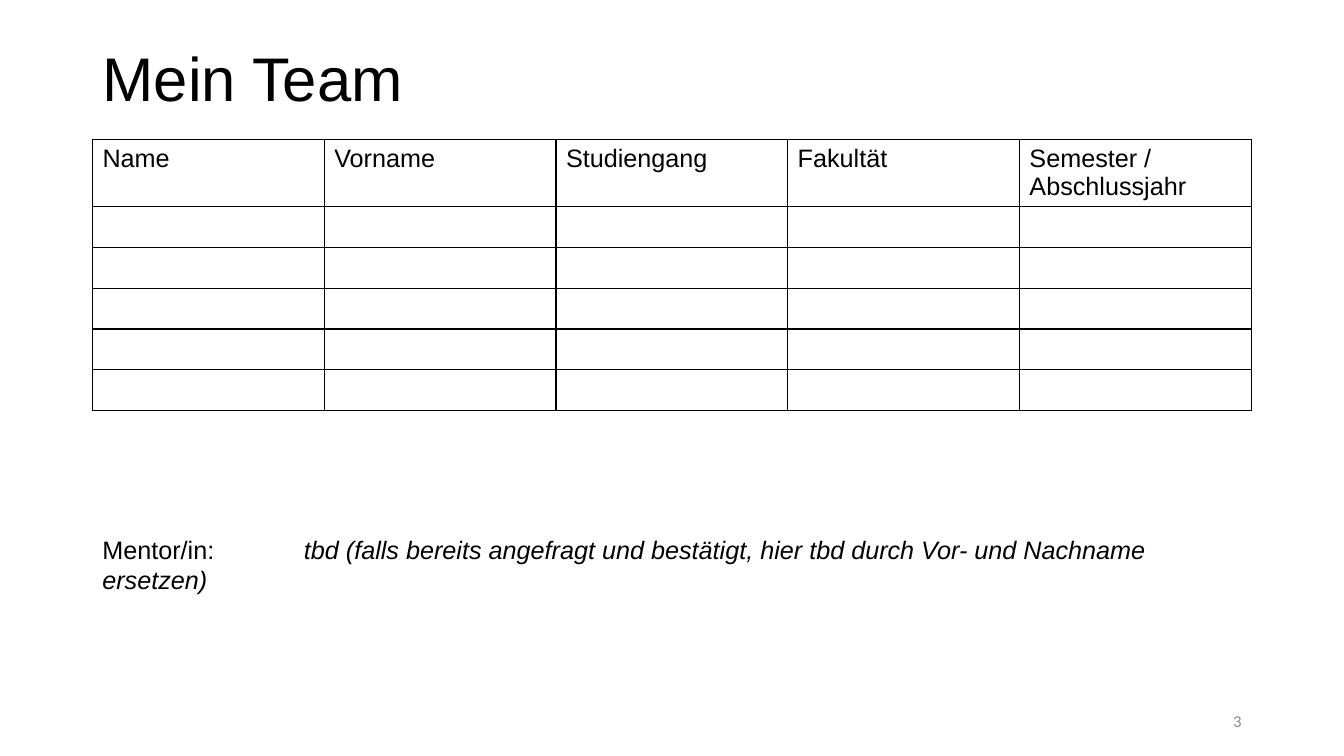
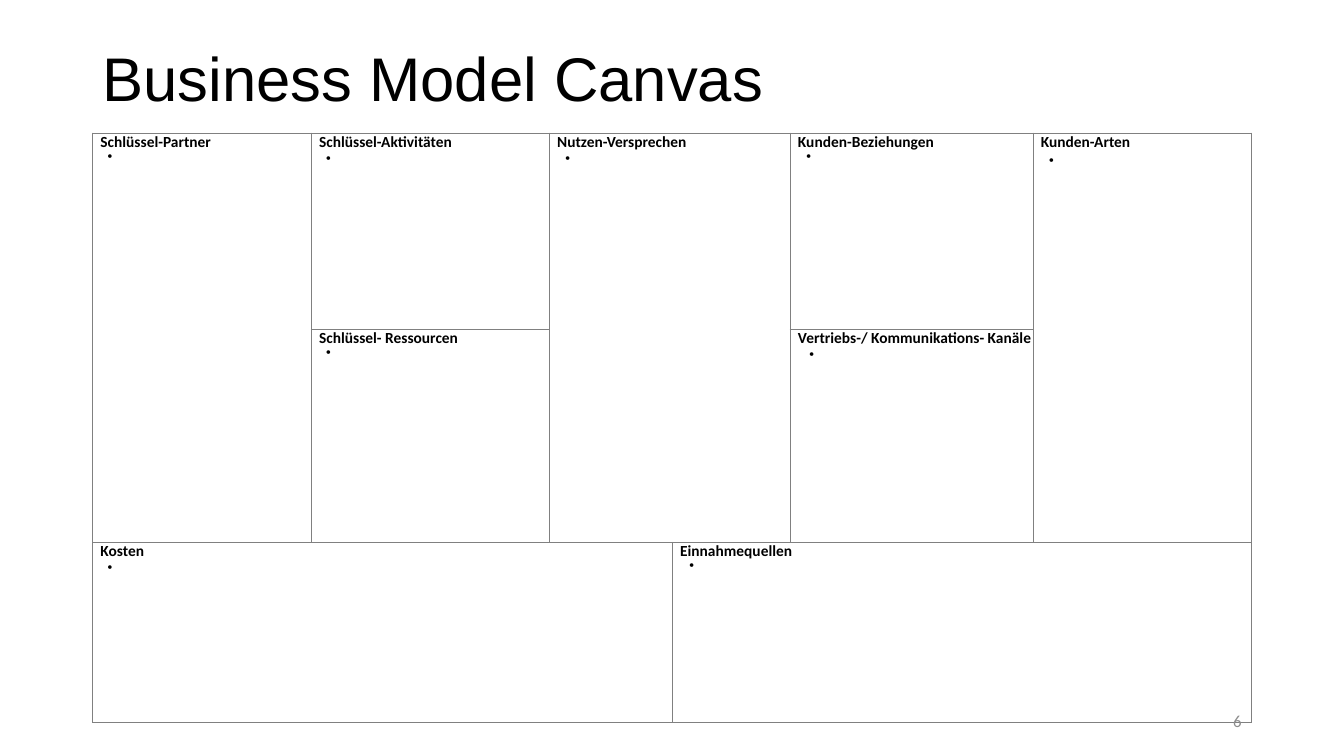
from lxml import etree
from pptx import Presentation
from pptx import util as u
from pptx.dml.color import RGBColor
from pptx.enum import text
from pptx.oxml import ns

COLORS = {"ink": "000000", "grid": "808080", "number": "8C8C8C"}
LEFT, WIDTH = u.Cm(2.33), u.Cm(29.21)


def add_span(para, words, size, color="ink", font="Arial", bold=False, italic=False):
    span = para.add_run()
    span.text = words
    span.font.name = font
    span.font.size = u.Pt(size)
    span.font.bold = bold
    span.font.italic = italic
    span.font.color.rgb = RGBColor.from_string(COLORS[color])


def add_grid(page, top, columns, rows, color, line_width):
    frame = page.shapes.add_table(
        len(rows), len(columns), LEFT, u.Cm(top), WIDTH, u.Cm(sum(rows)))
    table = frame.table
    table.first_row = False
    table.horz_banding = False
    for column, width in zip(table.columns, columns):
        column.width = u.Cm(width)
    for row, height in zip(table.rows, rows):
        row.height = u.Cm(height)
    for cell in table.iter_cells():
        cell.fill.background()
        properties = cell._tc.get_or_add_tcPr()
        for place, side in enumerate(("lnL", "lnR", "lnT", "lnB")):
            line = etree.Element(ns.qn(f"a:{side}"), w=str(u.Pt(line_width)))
            fill = etree.SubElement(line, ns.qn("a:solidFill"))
            etree.SubElement(fill, ns.qn("a:srgbClr"), val=COLORS[color])
            properties.insert(place, line)
    return table


deck = Presentation()
deck.slide_width, deck.slide_height = u.Cm(33.87), u.Cm(19.05)

pages = []
for heading in ("Mein Team", "Business Model Canvas"):
    page = deck.slides.add_slide(deck.slide_layouts[5])
    title = page.shapes.title
    title.left, title.top, title.width, title.height = LEFT, u.Cm(1.02), WIDTH, u.Cm(2.08)
    title.text_frame.auto_size = text.MSO_AUTO_SIZE.NONE
    title.text_frame.vertical_anchor = text.MSO_ANCHOR.MIDDLE
    para = title.text_frame.paragraphs[0]
    para.alignment = text.PP_ALIGN.LEFT
    para.line_spacing = 0.9
    add_span(para, heading, 44)
    pages.append(page)
team_page, canvas_page = pages

team = add_grid(team_page, 3.51, [5.84] * 5, [1.69] + [1.03] * 5, "ink", 1)
labels = ("Name", "Vorname", "Studiengang", "Fakultät", "Semester / Abschlussjahr")
for cell, label in zip(team.rows[0].cells, labels):
    add_span(cell.text_frame.paragraphs[0], label, 18)

mentor = team_page.shapes.add_textbox(LEFT, u.Cm(13.34), WIDTH, u.Cm(1.8))
mentor.text_frame.word_wrap = True
para = mentor.text_frame.paragraphs[0]
tabs = etree.SubElement(para._p.get_or_add_pPr(), ns.qn("a:tabLst"))
etree.SubElement(tabs, ns.qn("a:tab"), pos=str(u.Cm(5.08)), algn="l")
add_span(para, "Mentor/in:\t", 18)
add_span(para, "tbd (falls bereits angefragt und bestätigt, hier tbd durch "
         "Vor- und Nachname ersetzen)", 18, italic=True)

canvas = add_grid(canvas_page, 3.35, [5.51, 6, 3.1, 2.97, 6.12, 5.51],
                  [4.95, 5.36, 4.55], "grid", 0.5)
blocks = [
    (0, 0, 1, 0, "Schlüssel-Partner", 0.86, 0.85),
    (0, 1, 0, 1, "Schlüssel-Aktivitäten", 0.86, u.Pt(11.8)),
    (0, 2, 1, 3, "Nutzen-Versprechen", 0.89, u.Pt(11.8)),
    (0, 4, 0, 4, "Kunden-Beziehungen", 0.89, u.Pt(10.6)),
    (0, 5, 1, 5, "Kunden-Arten", 0.89, u.Pt(13.1)),
    (1, 1, 1, 1, "Schlüssel- Ressourcen", 0.86, u.Pt(11.8)),
    (1, 4, 1, 4, "Vertriebs-/ Kommunikations- Kanäle", 0.97, 1.08),
    (2, 0, 2, 2, "Kosten", 0.86, u.Pt(11.8)),
    (2, 3, 2, 5, "Einnahmequellen", 0.91, u.Pt(10.7)),
]
for row, column, last_row, last_column, label, indent, spacing in blocks:
    cell = canvas.cell(row, column)
    if (row, column) != (last_row, last_column):
        cell.merge(canvas.cell(last_row, last_column))
    cell.margin_left = cell.margin_right = cell.margin_top = cell.margin_bottom = 0
    para = cell.text_frame.paragraphs[0]
    para._p.get_or_add_pPr().set("marL", str(u.Cm(0.2)))
    para.line_spacing = 0.9 if row == 1 else 1.0
    add_span(para, label, 11, font="Calibri", bold=True)

    para = cell.text_frame.add_paragraph()
    properties = para._p.get_or_add_pPr()
    properties.set("marL", str(u.Cm(indent)))
    properties.set("indent", str(u.Cm(-0.48)))
    etree.SubElement(properties, ns.qn("a:buChar"), char="•")
    para.line_spacing = spacing
    add_span(para, " ", 10, font="Calibri")

for page, number in zip(pages, ("3", "6")):
    box = page.shapes.add_textbox(u.Cm(23.92), u.Cm(17.66), u.Cm(7.62), u.Cm(1.01))
    box.text_frame.word_wrap = True
    box.text_frame.vertical_anchor = text.MSO_ANCHOR.MIDDLE
    para = box.text_frame.paragraphs[0]
    para.alignment = text.PP_ALIGN.RIGHT
    add_span(para, number, 12, "number", "Calibri")

deck.save("out.pptx")
